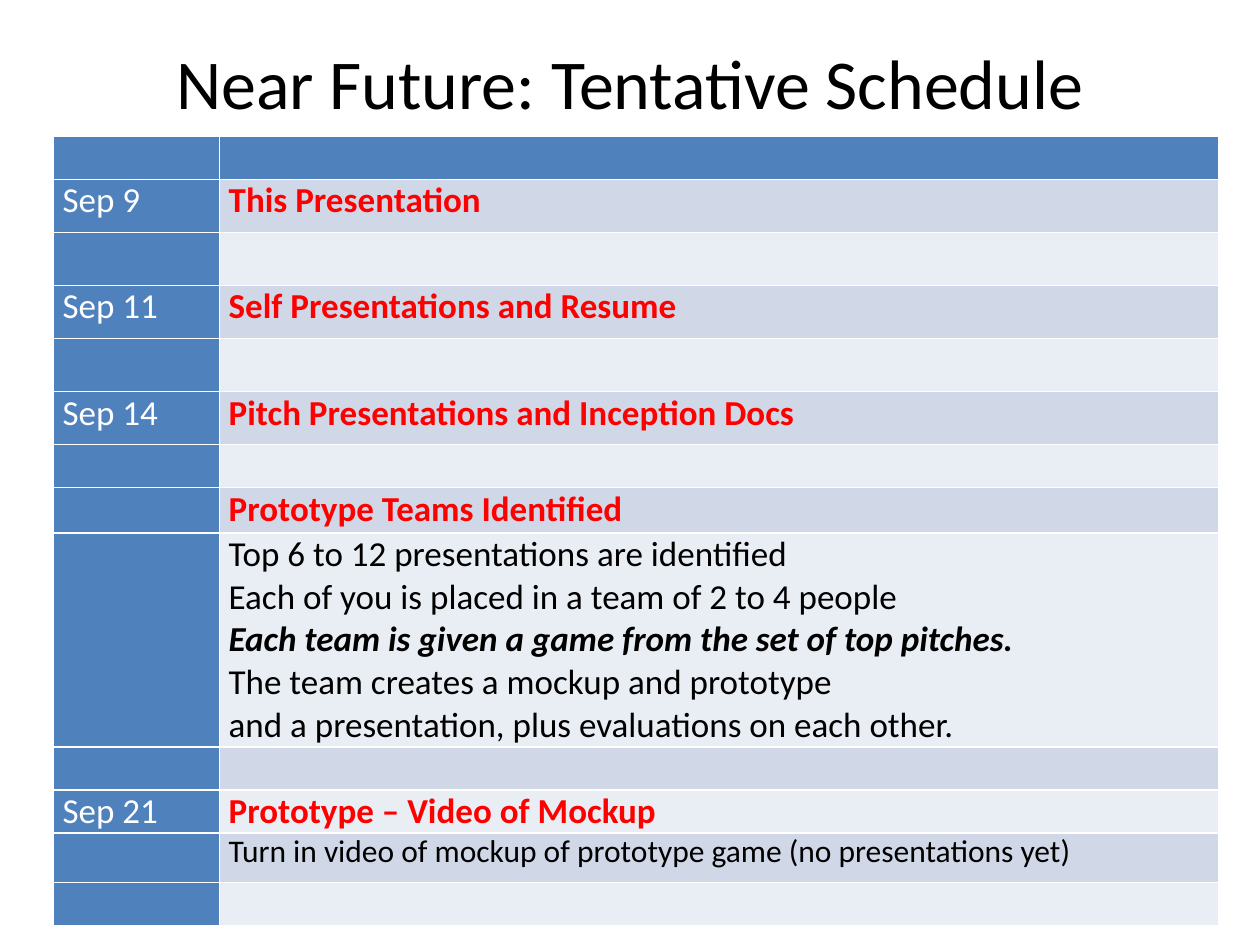
from lxml import etree
from pptx import Presentation
from pptx.dml.color import RGBColor
from pptx.enum import text
from pptx.oxml import ns
from pptx.util import Cm, Pt

BLUE = RGBColor(0x4F, 0x81, 0xBD)
BAND_DARK = RGBColor(0xD0, 0xD8, 0xE8)
BAND_LIGHT = RGBColor(0xE9, 0xED, 0xF4)
WHITE = RGBColor(0xFF, 0xFF, 0xFF)
BLACK = RGBColor(0, 0, 0)
RED = RGBColor(0xFF, 0, 0)
FONT = "Calibri"


def add_span(para, words, size, color, bold=False, italic=False):
    span = para.add_run()
    span.text = words
    span.font.name = FONT
    span.font.size = Pt(size)
    span.font.color.rgb = color
    span.font.bold = bold
    span.font.italic = italic


def fill_cell(cell, color, paragraphs):
    """Each paragraph is a list of lines followed by its text format."""
    cell.fill.solid()
    cell.fill.fore_color.rgb = color
    cell.margin_left = cell.margin_right = Cm(0.19)
    cell.margin_top = cell.margin_bottom = 0
    frame = cell.text_frame
    for index, (lines, style) in enumerate(paragraphs):
        para = frame.add_paragraph() if index else frame.paragraphs[0]
        for number, line in enumerate(lines):
            if number:
                para.add_line_break()
            add_span(para, line, *style)
    if not paragraphs:
        # An empty cell takes its line height from the end mark.
        etree.SubElement(frame.paragraphs[0]._p, ns.qn("a:endParaRPr"), sz="2000")


HEADING = (20, RED, True)
BODY = (20, BLACK)
STRESSED = (20, BLACK, True, True)
DETAIL = (18, BLACK)

# Row height in cm, date, paragraphs of the second column
schedule = [
    (0.86, "", []),
    (1.07, "Sep 9", [(["This Presentation"], HEADING)]),
    (1.07, "", []),
    (1.07, "Sep 11", [(["Self Presentations and Resume"], HEADING)]),
    (1.07, "", []),
    (1.07, "Sep 14", [(["Pitch Presentations and Inception Docs"], HEADING)]),
    (0.86, "", []),
    (0.91, "", [(["Prototype Teams Identified"], HEADING)]),
    (4.32, "", [
        (["Top 6 to 12 presentations are identified",
          "Each of you is placed in a team of 2 to 4 people"], BODY),
        (["Each team is given a game from the set of top pitches."], STRESSED),
        (["The team creates a mockup and prototype",
          "and a presentation, plus evaluations on each other."], BODY),
    ]),
    (0.86, "", []),
    (0.86, "Sep 21", [(["Prototype – Video of Mockup"], HEADING)]),
    (1.0, "", [(["Turn in video of mockup of prototype game (no presentations yet)"],
                DETAIL)]),
    (0.86, "", []),
]

deck = Presentation()
deck.slide_width, deck.slide_height = Cm(25.4), Cm(19.05)
page = deck.slides.add_slide(deck.slide_layouts[5])

title = page.shapes.title
title.left, title.top, title.width, title.height = Cm(1.27), Cm(0.76), Cm(22.86), Cm(1.78)
title.text_frame.vertical_anchor = text.MSO_ANCHOR.MIDDLE
heading = title.text_frame.paragraphs[0]
heading.alignment = text.PP_ALIGN.CENTER
add_span(heading, "Near Future: Tentative Schedule", 40, BLACK)

total_height = sum(row[0] for row in schedule)
table = page.shapes.add_table(len(schedule), 2, Cm(1.07), Cm(2.75),
                              Cm(23.49), Cm(total_height)).table
table.first_col = True
table.columns[0].width, table.columns[1].width = Cm(3.35), Cm(20.14)

for index, (height, date, paragraphs) in enumerate(schedule):
    table.rows[index].height = Cm(height)
    if index == 0:
        band = BLUE
    else:
        band = BAND_DARK if index % 2 else BAND_LIGHT
    fill_cell(table.cell(index, 0), BLUE, [([date], (20, WHITE))] if date else [])
    fill_cell(table.cell(index, 1), band, paragraphs)

deck.save("out.pptx")
